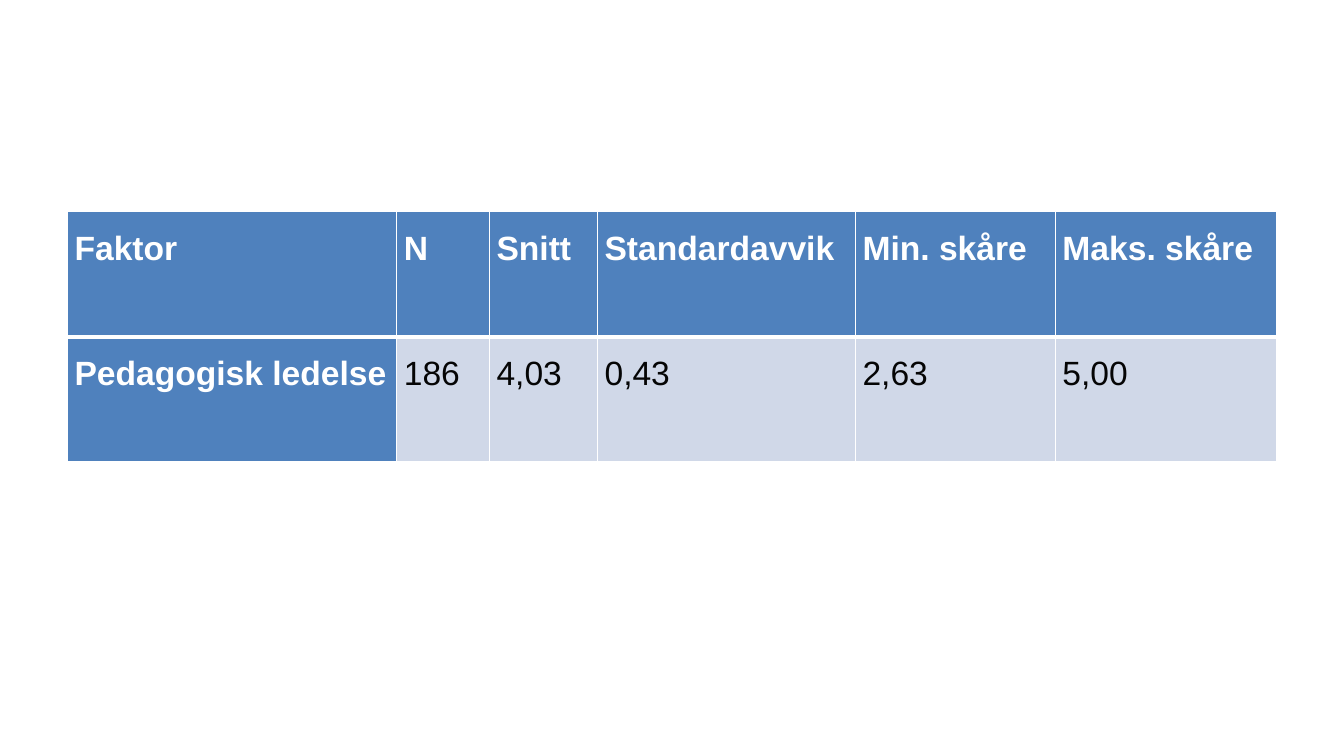
from lxml import etree
from pptx import Presentation
from pptx import util as u
from pptx.dml.color import RGBColor
from pptx.oxml.ns import qn

# Content
ROWS = [
    ("Faktor", "N", "Snitt", "Standardavvik", "Min. skåre", "Maks. skåre"),
    ("Pedagogisk ledelse", "186", "4,03", "0,43", "2,63", "5,00"),
]
COLORS = {"head": "4F81BD", "body": "D0D8E8", "line": "FFFFFF",
          "light": "FFFFFF", "dark": "050505"}

# Layout in points
WIDTHS = (235.2, 66.2, 77.2, 184.3, 142.8, 158.3)
LEFT, TOP, HIGH = 48.3, 151.2, 89.3
PAD = 5
THIN, THICK = 1, 3


def write(cell, words, size=24, font="Arial", color="dark", bold=False):
    para = cell.text_frame.paragraphs[0]
    para.line_spacing = 1.5
    run = para.add_run()
    run.text = words
    run.font.size = u.Pt(size)
    run.font.name = font
    run.font.bold = bold
    run.font.color.rgb = RGBColor.from_string(COLORS[color])


def border(cell, sides):
    props = cell._tc.get_or_add_tcPr()
    for spot, (side, width) in enumerate(sides.items()):
        line = etree.Element(qn("a:ln" + side), w=str(u.Pt(width)))
        fill = etree.SubElement(line, qn("a:solidFill"))
        etree.SubElement(fill, qn("a:srgbClr"), val=COLORS["line"])
        props.insert(spot, line)


def main():
    deck = Presentation()
    deck.slide_width, deck.slide_height = u.Pt(960), u.Pt(540)
    slide = deck.slides.add_slide(deck.slide_layouts[6])

    # Table frame
    table = slide.shapes.add_table(
        len(ROWS), len(WIDTHS), u.Pt(LEFT), u.Pt(TOP),
        u.Pt(sum(WIDTHS)), u.Pt(HIGH * len(ROWS))).table
    table.first_col = True
    for col, width in zip(table.columns, WIDTHS):
        col.width = u.Pt(width)

    # Cells: first row and first column are headings
    for r, row in enumerate(ROWS):
        table.rows[r].height = u.Pt(HIGH)
        for c, words in enumerate(row):
            cell = table.cell(r, c)
            head = r == 0 or c == 0
            cell.margin_left = cell.margin_right = u.Pt(PAD)
            cell.margin_top = cell.margin_bottom = 0
            cell.fill.solid()
            cell.fill.fore_color.rgb = RGBColor.from_string(
                COLORS["head" if head else "body"])
            border(cell, {"L": THIN, "R": THIN,
                          "T": THICK if r == 1 else THIN,
                          "B": THICK if r == 0 else THIN})
            write(cell, words, color="light" if head else "dark", bold=head)

    deck.save("out.pptx")


if __name__ == "__main__":
    main()
